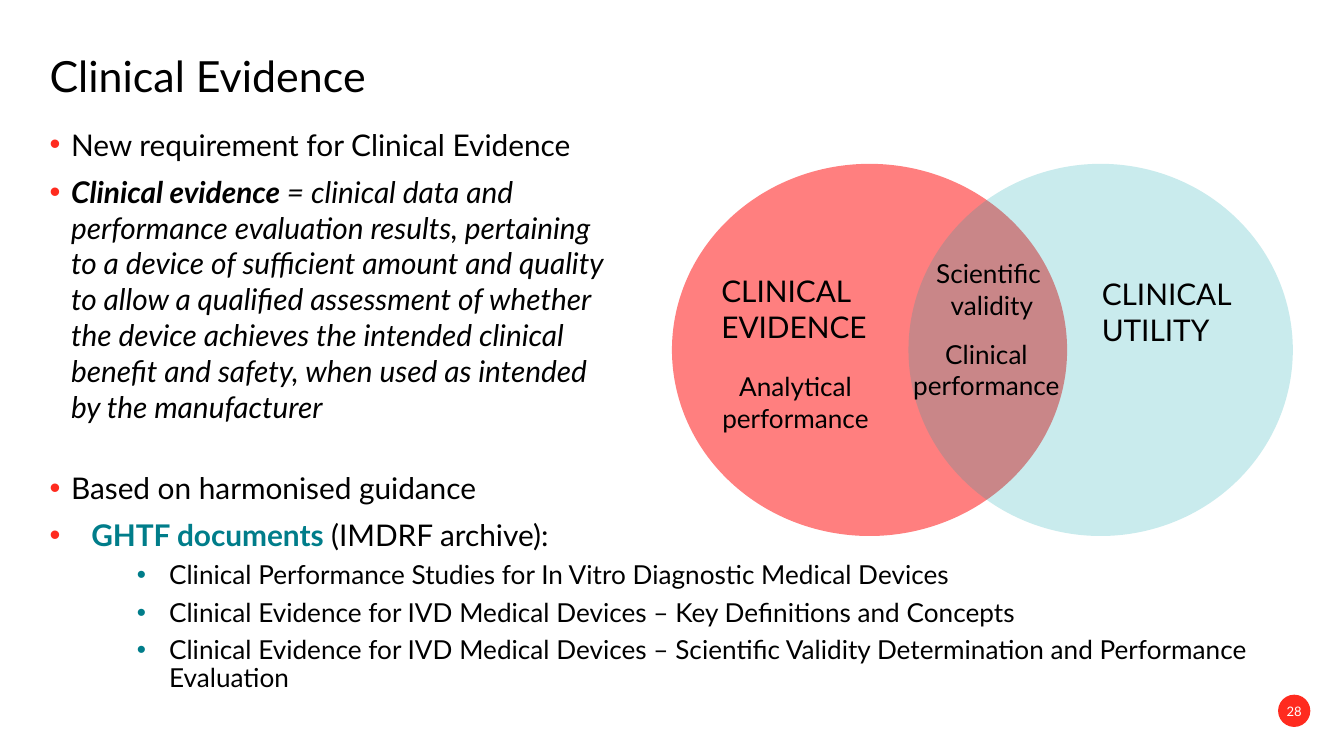
from lxml import etree
from pptx import Presentation
from pptx.dml.color import RGBColor
from pptx.enum.shapes import MSO_SHAPE
from pptx.enum.text import MSO_ANCHOR, PP_ALIGN
from pptx.oxml.ns import qn
from pptx.util import Pt

OVAL = MSO_SHAPE.OVAL
MIDDLE = MSO_ANCHOR.MIDDLE
TOP = MSO_ANCHOR.TOP
LEFT = PP_ALIGN.LEFT
CENTER = PP_ALIGN.CENTER

COLORS = {
    "text": "000000",
    "white": "FFFFFF",
    "accent": "FF2B1F",
    "teal": "007D8A",
    "evidence": "FF0000",
    "utility": "00A3AD",
}
MARGIN = 26.6
CIRCLE_TOP, CIRCLE_HEIGHT = 87.8, 199.4
LABEL_WIDTH = 122.4

POINT = {"left": 11.5, "hang": 11.5, "color": "accent", "percent": 104}
SOURCE = {**POINT, "left": 22.3, "hang": 22.3}
DOCUMENT = {"left": 64, "hang": 17.3, "color": "teal", "percent": 100}

DEFINITION = """= clinical data and 
performance evaluation results, pertaining
to a device of sufficient amount and quality
to allow a qualified assessment of whether
the device achieves the intended clinical
benefit and safety, when used as intended
by the manufacturer"""

# Each entry: spans of (text, format), bullet, paragraph format
BODY = [
    ([("New requirement for Clinical Evidence", {})], POINT, {}),
    ([("Clinical evidence ", {"bold": True, "italic": True}),
      (DEFINITION, {"italic": True})], POINT, {"space_before": Pt(6)}),
    ([("Based on harmonised guidance", {})], POINT, {"space_before": Pt(24.4)}),
    ([("GHTF documents ", {"bold": True, "color": "teal"}),
      ("(IMDRF archive):", {})], SOURCE, {"space_before": Pt(6)}),
]
DOCUMENTS = [
    "Clinical Performance Studies for In Vitro Diagnostic Medical Devices",
    "Clinical Evidence for IVD Medical Devices – Key Definitions and Concepts",
    "Clinical Evidence for IVD Medical Devices – Scientific Validity "
    "Determination and Performance Evaluation",
]
CIRCLES = [(360, 211.7, "evidence", 50), (486.7, 205.9, "utility", 21)]
# Each entry: text, left, top, height, size, alignment
LABELS = [
    ("CLINICAL EVIDENCE", 379.4, 142.6, 46, 16, LEFT),
    ("CLINICAL\nUTILITY", 583.2, 144, 46, 16, LEFT),
    ("Analytical performance", 365, 195.1, 41, 14, CENTER),
    ("Scientific \nvalidity", 470.2, 134.6, 41, 14, CENTER),
    ("Clinical performance", 467.3, 177.8, 41, 14, CENTER),
]


class SlideBuilder:
    def __init__(self, page, font="Lato"):
        self.page = page
        self.font = font

    def rgb(self, name):
        return RGBColor.from_string(COLORS[name])

    def oval(self, left, top, width, height, color, opacity=100):
        shape = self.page.shapes.add_shape(
            OVAL, Pt(left), Pt(top), Pt(width), Pt(height))
        shape.shadow.inherit = False
        shape.line.fill.background()
        shape.fill.solid()
        shape.fill.fore_color.rgb = self.rgb(color)
        if opacity < 100:
            tone = shape.fill._xPr.find(".//" + qn("a:srgbClr"))
            etree.SubElement(tone, qn("a:alpha"), val=str(opacity * 1000))
        return shape

    def frame(self, shape, inset=(0, 0), anchor=TOP):
        """Set wrapping, anchor and (horizontal, vertical) insets."""
        across, down = inset
        formats = {
            "word_wrap": True, "vertical_anchor": anchor,
            "margin_left": Pt(across), "margin_right": Pt(across),
            "margin_top": Pt(down), "margin_bottom": Pt(down),
        }
        for name, value in formats.items():
            setattr(shape.text_frame, name, value)
        return shape.text_frame

    def text_box(self, left, top, width, height, inset=(0, 0)):
        box = self.page.shapes.add_textbox(
            Pt(left), Pt(top), Pt(width), Pt(height))
        return self.frame(box, inset)

    def fill_para(self, para, spans, size, **formats):
        """Fill a paragraph with (text, format) spans; newlines become breaks."""
        for name, value in formats.items():
            setattr(para, name, value)
        for text, style in spans:
            for index, line in enumerate(text.split("\n")):
                if index:
                    para.add_line_break()
                    etree.SubElement(para._p[-1], qn("a:rPr"), sz=str(size * 100))
                span = para.add_run()
                span.text = line
                span.font.color.rgb = self.rgb(style.get("color", "text"))
                values = {"name": self.font, "size": Pt(size),
                          "bold": style.get("bold", False),
                          "italic": style.get("italic", False)}
                for name, value in values.items():
                    setattr(span.font, name, value)

    def bullet(self, para, left, hang, color, percent):
        props = para._p.get_or_add_pPr()
        props.set("marL", str(Pt(left)))
        props.set("indent", str(-Pt(hang)))
        tint = etree.SubElement(props, qn("a:buClr"))
        etree.SubElement(tint, qn("a:srgbClr"), val=COLORS[color])
        etree.SubElement(props, qn("a:buSzPct"), val=str(percent * 1000))
        etree.SubElement(props, qn("a:buFont"), typeface="Arial")
        etree.SubElement(props, qn("a:buChar"), char="•")

    def bullet_list(self, frame):
        items = [(spans, mark, formats, 16) for spans, mark, formats in BODY]
        spacing = {"space_before": Pt(5), "line_spacing": 0.9}
        items += [([(text, {})], DOCUMENT, spacing, 14) for text in DOCUMENTS]
        for index, (spans, mark, formats, size) in enumerate(items):
            para = frame.add_paragraph() if index else frame.paragraphs[0]
            para.level = 1 if mark is DOCUMENT else 0
            self.bullet(para, **mark)
            self.fill_para(para, spans, size, **formats)


def main():
    deck = Presentation()
    deck.slide_width, deck.slide_height = Pt(720), Pt(405)
    builder = SlideBuilder(deck.slides.add_slide(deck.slide_layouts[6]))

    badge = builder.oval(684.7, 372.2, 17.3, 17.3, "accent")
    number = builder.frame(badge, anchor=MIDDLE).paragraphs[0]
    builder.fill_para(number, [("28", {"color": "white"})], 7, alignment=CENTER)

    title = builder.text_box(MARGIN, 29.5, 666.7, 25.2).paragraphs[0]
    builder.fill_para(title, [("Clinical Evidence", {})], 23, line_spacing=0.9)

    builder.bullet_list(builder.text_box(MARGIN, 67.7, 666, 308.9))

    for left, width, color, opacity in CIRCLES:
        builder.oval(left, CIRCLE_TOP, width, CIRCLE_HEIGHT, color, opacity)
    for text, left, top, height, size, alignment in LABELS:
        frame = builder.text_box(left, top, LABEL_WIDTH, height, (7.2, 3.6))
        builder.fill_para(frame.paragraphs[0], [(text, {})], size,
                          alignment=alignment)

    deck.save("out.pptx")


if __name__ == "__main__":
    main()
